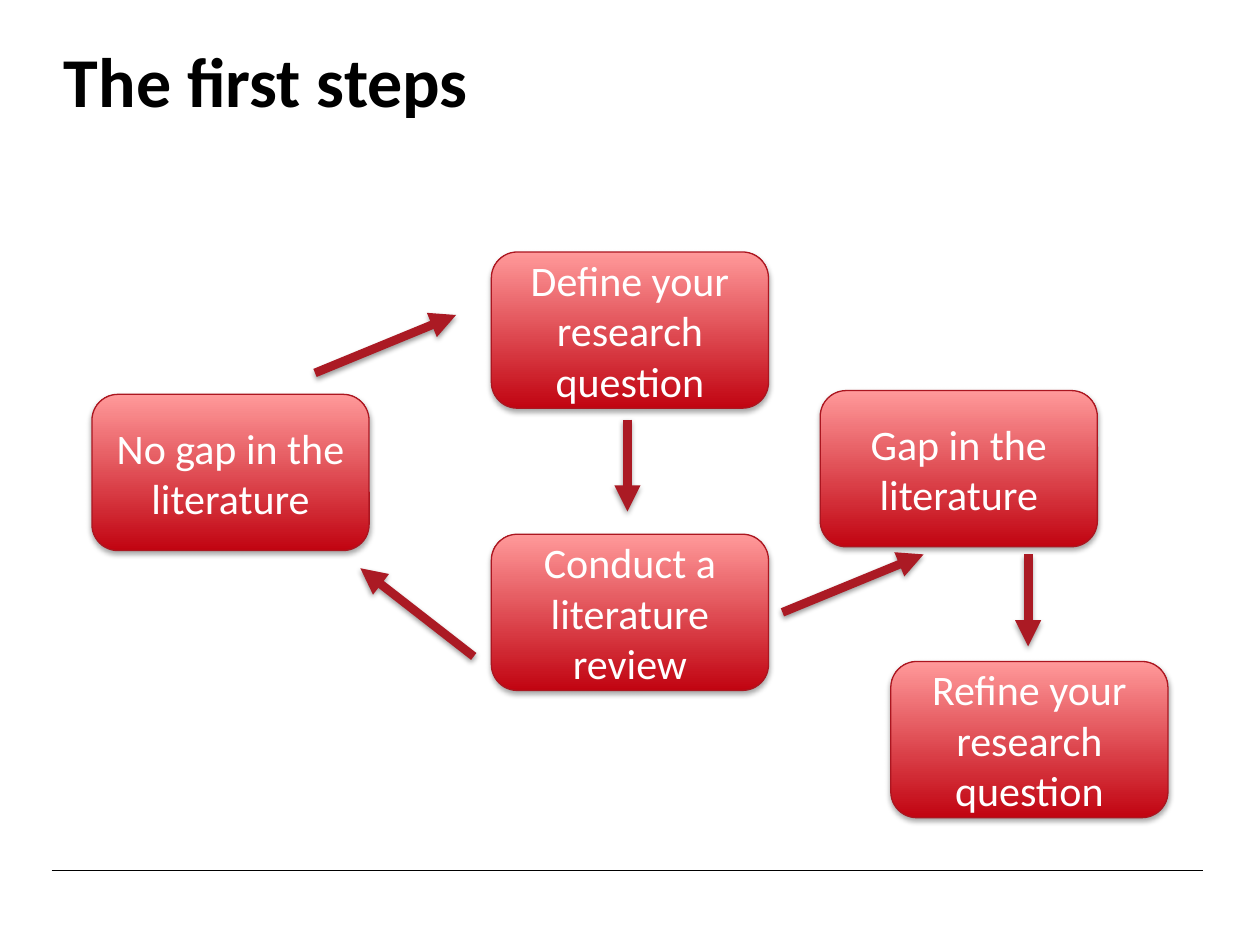
from lxml.etree import SubElement
from pptx import Presentation
from pptx.dml.color import RGBColor
from pptx.enum.shapes import MSO_CONNECTOR, MSO_SHAPE
from pptx.enum.text import MSO_ANCHOR, PP_ALIGN
from pptx.oxml import parse_xml
from pptx.oxml.ns import nsdecls, qn
from pptx.util import Inches, Pt

BLACK = RGBColor(0x00, 0x00, 0x00)
WHITE = RGBColor(0xFF, 0xFF, 0xFF)
DARK_RED = RGBColor(0xC1, 0x04, 0x11)
LIGHT_RED = RGBColor(0xFF, 0x99, 0x9A)
OUTLINE_RED = RGBColor(0xAB, 0x16, 0x20)
ARROW_RED = RGBColor(0xAB, 0x1A, 0x24)


def add_shadow(shape, distance, opacity):
    shape._element.spPr.append(parse_xml(
        f'<a:effectLst {nsdecls("a")}>'
        f'<a:outerShdw blurRad="{Pt(3.1)}" dist="{Pt(distance)}" dir="5400000" rotWithShape="0">'
        f'<a:srgbClr val="{BLACK}"><a:alpha val="{opacity * 1000}"/></a:srgbClr>'
        '</a:outerShdw></a:effectLst>'))


def add_line(start, end, color, width):
    line = page.shapes.add_connector(
        MSO_CONNECTOR.STRAIGHT, *[Inches(value) for value in (*start, *end)])
    line.line.color.rgb = color
    line.line.width = Pt(width)
    return line


deck = Presentation()
deck.slide_width = Inches(10)
deck.slide_height = Inches(7.5)
page = deck.slides.add_slide(deck.slide_layouts[6])

rule = add_line((0.41, 6.91), (9.55, 6.91), BLACK, 0.75)
SubElement(rule._element.spPr, qn("a:effectLst"))

title = page.shapes.add_textbox(Inches(0.41), Inches(0.28), Inches(9.14), Inches(0.71))
title.text_frame.word_wrap = True
title.text_frame.vertical_anchor = MSO_ANCHOR.MIDDLE
para = title.text_frame.paragraphs[0]
para.text = "The first steps"
para.font.name = "Calibri"
para.font.size = Pt(40)
para.font.bold = True
para.font.color.rgb = BLACK

steps = [
    ("No gap in the literature", 0.73, 3.13),
    ("Gap in the literature", 6.51, 3.1),
    ("Refine your research question", 7.07, 5.25),
    ("Conduct a literature review", 3.9, 4.24),
    ("Define your research question", 3.9, 2),
]
for text, left, top in steps:
    box = page.shapes.add_shape(
        MSO_SHAPE.ROUNDED_RECTANGLE, Inches(left), Inches(top), Inches(2.2), Inches(1.24))
    box.fill.gradient()
    box.fill.gradient_angle = 90
    for stop, color in zip(box.fill.gradient_stops, (DARK_RED, LIGHT_RED)):
        stop.color.rgb = color
    box.line.color.rgb = OUTLINE_RED
    box.line.width = Pt(0.75)
    add_shadow(box, 1.8, 35)
    box.text_frame.word_wrap = True
    box.text_frame.vertical_anchor = MSO_ANCHOR.MIDDLE
    para = box.text_frame.paragraphs[0]
    para.text = text
    para.alignment = PP_ALIGN.CENTER
    para.font.name = "Calibri"
    para.font.size = Pt(24)
    para.font.color.rgb = WHITE

arrows = [
    ((4.98, 3.33), (4.98, 4.06)),
    ((8.16, 4.4), (8.16, 5.13)),
    ((6.21, 4.86), (7.33, 4.4)),
    ((3.76, 5.21), (2.86, 4.51)),
    ((2.5, 2.96), (3.62, 2.5)),
]
for start, end in arrows:
    arrow = add_line(start, end, ARROW_RED, 5)
    SubElement(arrow.line._get_or_add_ln(), qn("a:tailEnd"), type="triangle")
    add_shadow(arrow, 1.6, 38)

deck.save("out.pptx")
